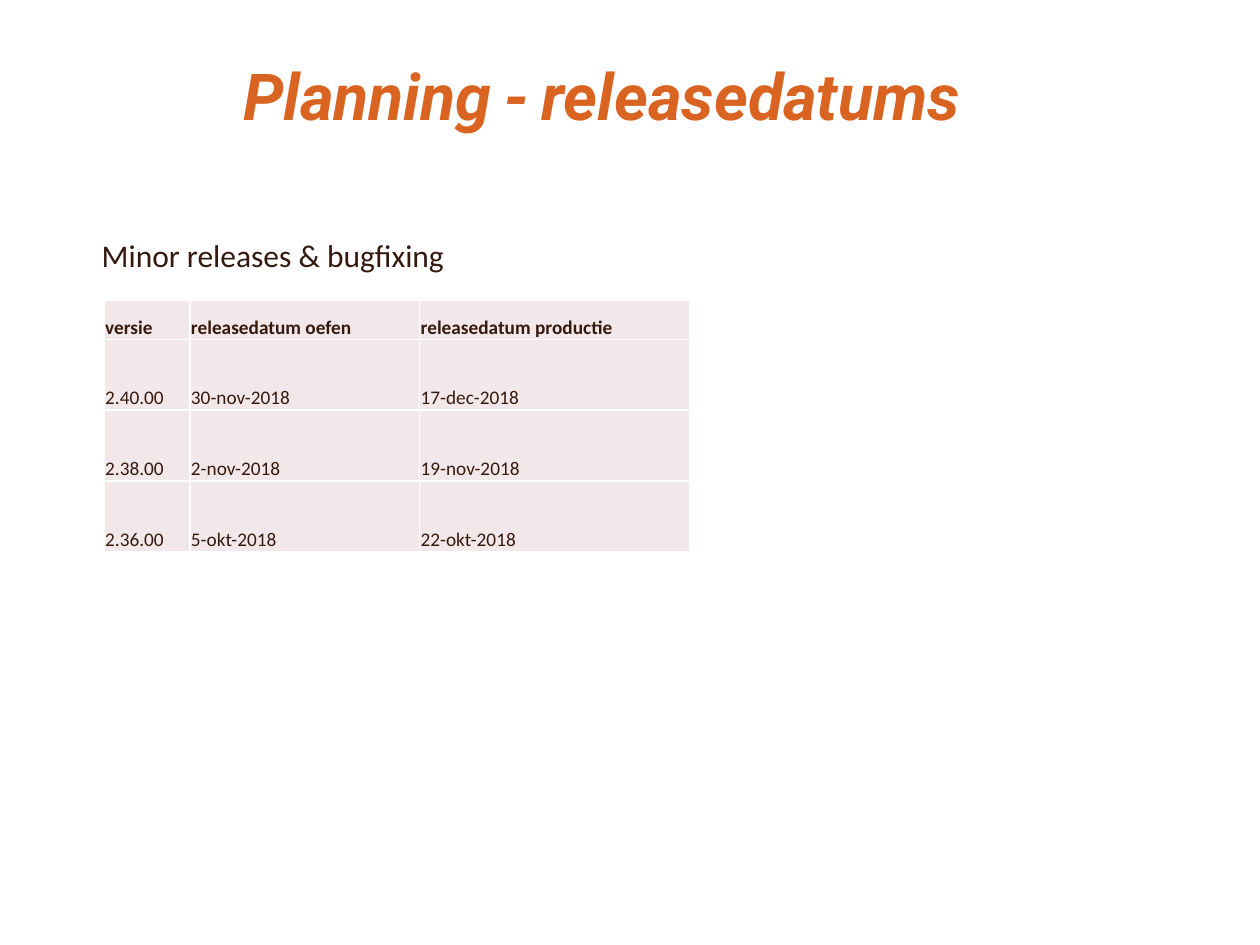
from lxml import etree
from pptx import Presentation
from pptx import util as u
from pptx.dml.color import RGBColor
from pptx.enum import text
from pptx.oxml import ns

COLORS = {"title": "D96422", "body": "34190F", "cell": "F3E8E9", "border": "FFFFFF"}
TITLE_FORMAT = dict(font="Roboto", size=37, color="title", bold=True, italic=True)
SPACE_FORMAT = dict(TITLE_FORMAT, font="Calibri", size=32, color="body")


def add_run(paragraph, content, font="Calibri", size=18, color="body", bold=False, italic=False):
    run = paragraph.add_run()
    run.text = content
    run.font.name = font
    run.font.size = u.Pt(size)
    run.font.bold = bold
    run.font.italic = italic
    run.font.color.rgb = RGBColor.from_string(COLORS[color])


class SlideBuilder:
    def __init__(self, slide):
        self.slide = slide

    def text_box(self, left, top, width, height, runs, inset_x=0.25, inset_y=0.13):
        shape = self.slide.shapes.add_textbox(*map(u.Cm, (left, top, width, height)))
        frame = shape.text_frame
        frame.word_wrap = True
        frame.margin_left = frame.margin_right = u.Cm(inset_x)
        frame.margin_top = frame.margin_bottom = u.Cm(inset_y)
        for content, style in runs:
            add_run(frame.paragraphs[0], content, **style)

    def cell_borders(self, cell):
        properties = cell._tc.get_or_add_tcPr()
        for position, side in enumerate(("lnL", "lnR", "lnT", "lnB")):
            line = etree.Element(ns.qn(f"a:{side}"), w=str(u.Pt(1)))
            fill = etree.SubElement(line, ns.qn("a:solidFill"))
            etree.SubElement(fill, ns.qn("a:srgbClr"), val=COLORS["border"])
            properties.insert(position, line)

    def table(self, left, top, widths, heights, rows):
        frame = self.slide.shapes.add_table(
            len(rows), len(widths), u.Cm(left), u.Cm(top),
            u.Cm(sum(widths)), u.Cm(sum(heights)))
        table = frame.table
        for column, width in zip(table.columns, widths):
            column.width = u.Cm(width)
        for row, height in zip(table.rows, heights):
            row.height = u.Cm(height)
        for row_index, values in enumerate(rows):
            for column_index, value in enumerate(values):
                cell = table.cell(row_index, column_index)
                cell.margin_left = cell.margin_right = cell.margin_top = u.Cm(0.02)
                cell.margin_bottom = 0
                cell.vertical_anchor = text.MSO_ANCHOR.BOTTOM
                cell.fill.solid()
                cell.fill.fore_color.rgb = RGBColor.from_string(COLORS["cell"])
                self.cell_borders(cell)
                add_run(cell.text_frame.paragraphs[0], value, size=11, bold=row_index == 0)


def main():
    presentation = Presentation()
    presentation.slide_width, presentation.slide_height = u.Cm(25.4), u.Cm(19.05)
    builder = SlideBuilder(presentation.slides.add_slide(presentation.slide_layouts[6]))

    # Title
    builder.text_box(4.9, 1.12, 20.07, 2, [
        ("Planning", TITLE_FORMAT), (" ", SPACE_FORMAT), ("-", TITLE_FORMAT),
        (" ", SPACE_FORMAT), ("releasedatums", TITLE_FORMAT),
    ], inset_x=0, inset_y=0)

    # Subheading
    builder.text_box(1.8, 4.62, 22.6, 1.03, [("Minor releases & bugfixing", {})])

    # Release dates
    builder.table(2.1, 6.05, [1.73, 4.63, 5.45], [0.79] + [1.43] * 3, [
        ("versie", "releasedatum oefen", "releasedatum productie"),
        ("2.40.00", "30-nov-2018", "17-dec-2018"),
        ("2.38.00", "2-nov-2018", "19-nov-2018"),
        ("2.36.00", "5-okt-2018", "22-okt-2018"),
    ])
    presentation.save("out.pptx")


if __name__ == "__main__":
    main()
